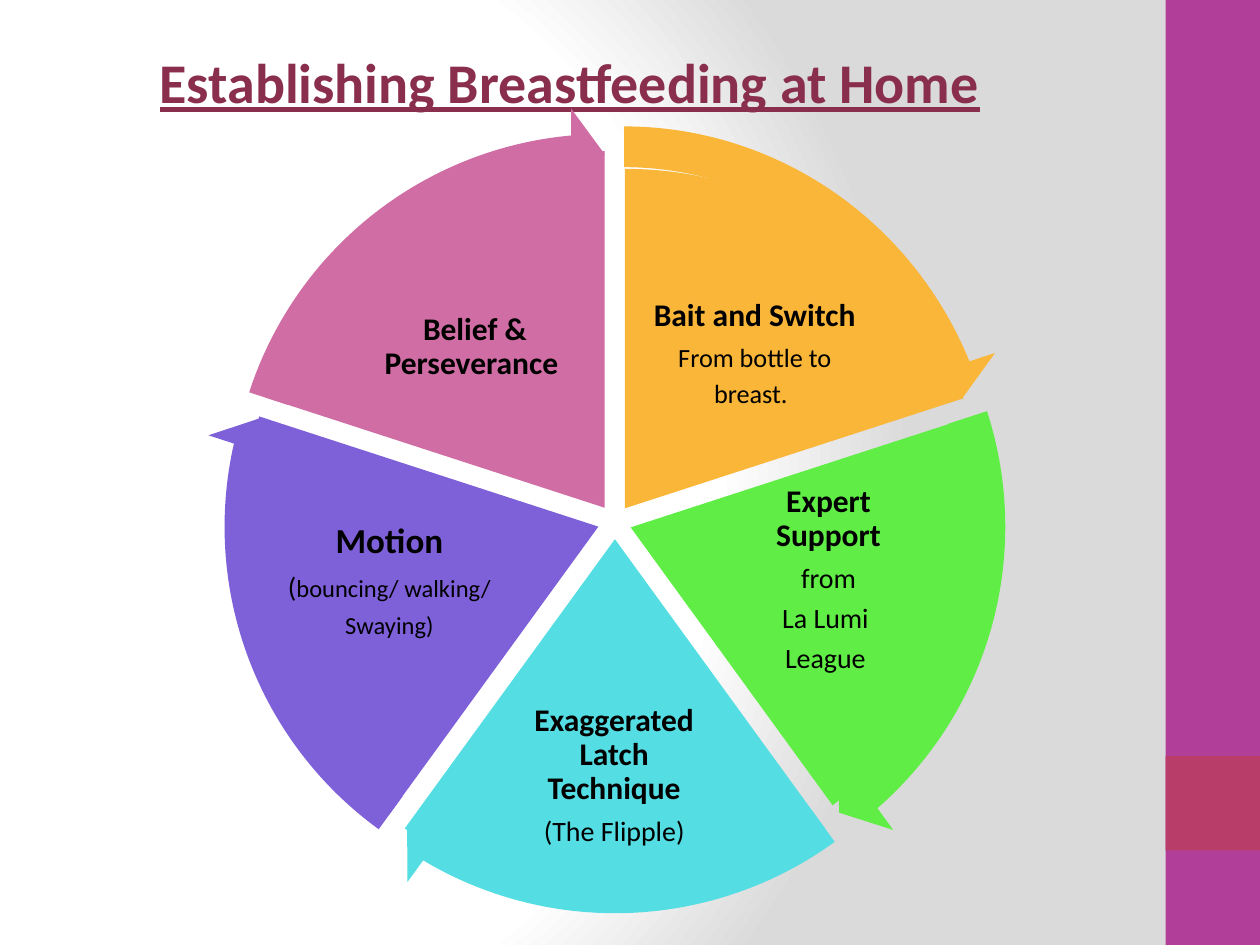
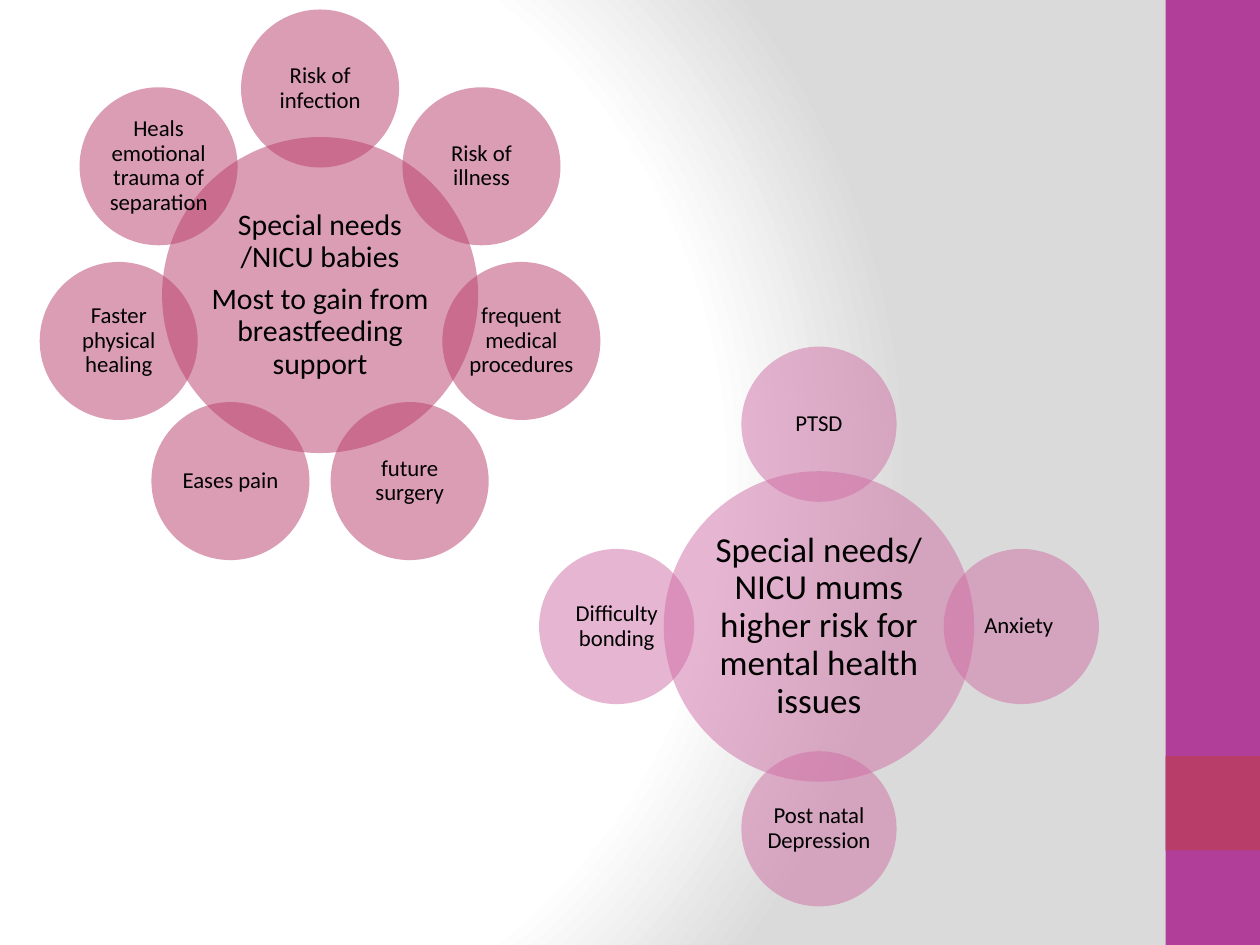
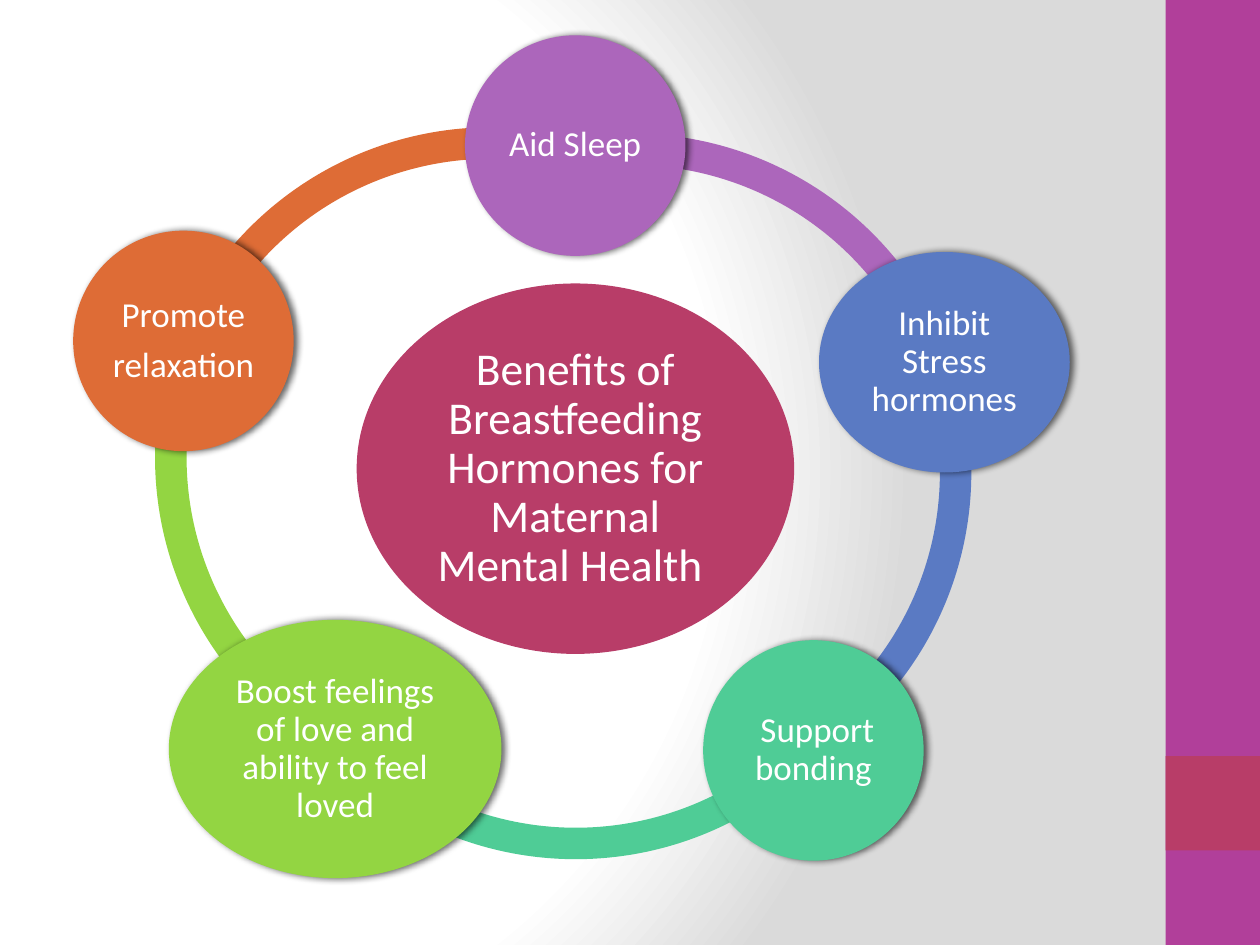
from math import cos, pi, sin

from pptx import Presentation
from pptx.dml.color import RGBColor
from pptx.enum.shapes import MSO_SHAPE
from pptx.enum.text import MSO_ANCHOR, PP_ALIGN
from pptx.oxml import parse_xml
from pptx.oxml.ns import nsdecls, qn
from pptx.util import Pt

RECT, OVAL, PIE = MSO_SHAPE.RECTANGLE, MSO_SHAPE.OVAL, MSO_SHAPE.PIE
ARROW, ARC = MSO_SHAPE.CIRCULAR_ARROW, MSO_SHAPE.BLOCK_ARC
MIDDLE, CENTER = MSO_ANCHOR.MIDDLE, PP_ALIGN.CENTER

BLACK = RGBColor(0x00, 0x00, 0x00)
WHITE = RGBColor(0xFF, 0xFF, 0xFF)
MAGENTA = RGBColor(0xB1, 0x3F, 0x9A)
CRIMSON = RGBColor(0xB8, 0x3D, 0x68)
WINE = RGBColor(0x8A, 0x2E, 0x4E)
PINK = RGBColor(0xCF, 0x6D, 0xA4)
AMBER = RGBColor(0xF9, 0xB6, 0x39)
LIME = RGBColor(0x60, 0xEE, 0x46)
CYAN = RGBColor(0x54, 0xDD, 0xE3)
VIOLET = RGBColor(0x7E, 0x60, 0xD9)
ORANGE = RGBColor(0xDE, 0x6C, 0x36)
GREEN = RGBColor(0x93, 0xD5, 0x42)
JADE = RGBColor(0x4F, 0xCC, 0x96)
BLUE = RGBColor(0x5A, 0x7A, 0xC3)
PURPLE = RGBColor(0xAC, 0x66, 0xBB)
SILVER = RGBColor(0xDA, 0xDA, 0xDA)

FONT = "Calibri"
WIDTH, HEIGHT, BAND = 720, 540, 54
ADJ_PER_DEGREE = 0.6
BODY = {"alignment": CENTER, "line_spacing": 0.9, "space_after": Pt(0)}

WHEEL_SIZE, WHEEL_ARROW, WHEEL_STEP = 407.5, 458, 72
WHEEL = [
    (AMBER, (152.6, 96.5, 409, 388), (127.4, 56.9, 458.6, 468),
     (365.8, 161.3, 131, 83.5),
     [[("Bait and Switch", 18, True)],
      [("From bottle to breast.", 15, False), (" ", 20, False)]]),
    (LIME, (167.8, 103, 385.2, 396.7), (131.8, 72, 458, 458),
     (416.2, 284.4, 114.5, 94.3),
     [[("Expert Support", 18, True)], [(" from ", 16, False)],
      [("La Lumi ", 16, False)], [("League ", 16, False)]]),
    (CYAN, (146.2, 104.4, 410.4, WHEEL_SIZE), (122.4, 79.2, 458, 458),
     (292.3, 390.2, 117.4, 106.6),
     [[("Exaggerated Latch Technique", 18, True)],
      [("(The Flipple)", 16, False)]]),
    (VIOLET, (138.2, 97.2, WHEEL_SIZE, WHEEL_SIZE), (113, 72, 458, 458),
     (162, 283.7, 121, 97.2),
     [[("Motion", 20, True)],
      [("(", 16, False), ("bouncing/ walking/ ", 14, False)],
      [("Swaying)", 14, False)]]),
    (PINK, (141.8, 86.4, WHEEL_SIZE, WHEEL_SIZE), (116.6, 61.2, 458, 458),
     (205.9, 154.8, 131, 87.1),
     [[("Belief & Perseverance ", 18, True)]]),
]

BABY_HUB = [[("Special needs /NICU babies", 17, False)],
            [("Most to gain from breastfeeding support", 17, False)]]
BABY_GAINS = ["Risk of infection", "Risk of illness",
              "frequent medical procedures ", "future surgery", "Eases pain",
              "Faster physical healing", "Heals emotional trauma of separation"]
MUM_HUB = [[("Special needs/ NICU mums higher risk for mental health issues",
             20, False)]]
MUM_RISKS = ["PTSD", "Anxiety ", "Post natal Depression",
             "Difficulty bonding"]

RING_SIZE, RING_THICK = 390.2, 18
RING = [
    (ORANGE, (85.7, 72.7), (202.47, 284.52)),
    (GREEN, (88.6, 66.2), (118.8, 200.3)),
    (JADE, (133.9, 100.8), (44.41, 136.03)),
    (BLUE, (164.9, 74.9), (340.66, 56.56)),
    (PURPLE, (165.6, 76.3), (260.43, 340.3)),
]
BENEFITS_HUB = ("Benefits of Breastfeeding Hormones for Maternal "
                "Mental Health ")
BENEFITS = [
    (PURPLE, (265.7, 20.2, 126, 126), ["Aid Sleep"]),
    (BLUE, (468, 144, 143.3, 126), ["Inhibit Stress hormones"]),
    (JADE, (401.8, 365.8, 126, 126), [" Support bonding"]),
    (GREEN, (96.5, 354.2, 190.1, 147.6),
     ["Boost feelings of love and ability to feel loved"]),
    (ORANGE, (41.8, 131.8, 126, 126), ["Promote", "relaxation "]),
]


def pts(box):
    """Turn a box of numbers into lengths."""
    return [Pt(v) for v in box]


def write(tf, paras, color, inset=2):
    """Fill a frame with centred paragraphs of (text, size, bold) runs."""
    frame = {"word_wrap": True, "vertical_anchor": MIDDLE}
    frame.update((f"margin_{side}", Pt(inset))
                 for side in ("left", "top", "right", "bottom"))
    for name, value in frame.items():
        setattr(tf, name, value)
    for i, runs in enumerate(paras):
        p = tf.paragraphs[0] if i == 0 else tf.add_paragraph()
        for name, value in BODY.items():
            setattr(p, name, value)
        after = p._p.pPr.find(qn("a:spcAft"))
        after.replace(after[0], parse_xml(
            f'<a:spcPct {nsdecls("a")} val="35000"/>'))
        for text, size, bold in runs:
            add_run(p, text, color, size=Pt(size), bold=bold)


def add_run(p, text, color, **fmt):
    """Add one run with its font values."""
    r = p.add_run()
    r.text = text
    r.font.color.rgb = color
    for name, value in {"name": FONT, **fmt}.items():
        setattr(r.font, name, value)


def add_flat(s, kind, box, color, adj=()):
    """Add a preset shape with a plain fill and no line."""
    sp = s.shapes.add_shape(kind, *pts(box))
    sp.shadow.inherit = False
    sp.fill.solid()
    sp.fill.fore_color.rgb = color
    sp.line.fill.background()
    for i, value in enumerate(adj):
        sp.adjustments[i] = value
    return sp


def set_alpha(sp, percent):
    """Make the fill of a shape see-through."""
    clr = sp._element.spPr.find(qn("a:solidFill"))[0]
    clr.append(parse_xml(
        f'<a:alpha {nsdecls("a")} val="{percent * 1000}"/>'))


def set_shadow(sp):
    """Give a shape a soft shadow on its right."""
    effects = sp._element.spPr.find(qn("a:effectLst"))
    effects.append(parse_xml(
        f'<a:outerShdw {nsdecls("a")} blurRad="{Pt(4)}" dist="{Pt(2)}" '
        'dir="0" rotWithShape="0"><a:srgbClr val="000000">'
        '<a:alpha val="60000"/></a:srgbClr></a:outerShdw>'))


def set_background(prs):
    """Give the master a round white to grey gradient."""
    master = prs.slide_master
    master.background.fill.solid()
    bg = master.element.find(".//" + qn("p:bgPr"))
    stops = "".join(
        f'<a:gs pos="{pos}"><a:srgbClr val="{color}"/></a:gs>'
        for pos, color in ((0, WHITE), (75000, WHITE), (100000, SILVER)))
    bg.replace(bg[0], parse_xml(
        f'<a:gradFill {nsdecls("a")} rotWithShape="1">'
        f'<a:gsLst>{stops}</a:gsLst><a:path path="circle"><a:fillToRect '
        'l="20000" t="50000" r="100000" b="50000"/></a:path></a:gradFill>'))


def add_slide(prs):
    """Add a blank slide with the side band."""
    s = prs.slides.add_slide(prs.slide_layouts[6])
    left = WIDTH - BAND
    add_flat(s, RECT, (left, 0, BAND, HEIGHT), MAGENTA)
    add_flat(s, RECT, (left, HEIGHT - 2 * BAND, BAND, BAND), CRIMSON)
    return s


def add_title(s, box, text):
    """Add the underlined slide title."""
    tf = s.shapes.add_textbox(*pts(box)).text_frame
    tf.word_wrap = False
    add_run(tf.paragraphs[0], text, WINE,
            size=Pt(32), bold=True, underline=True)


def add_wheel(s, sectors):
    """Add equal sectors clockwise from the top, then their arrows."""
    spans = []
    for i in range(len(sectors)):
        start = (270 + WHEEL_STEP * i) % 360
        end = (start + WHEEL_STEP) % 360
        spans.append((start * ADJ_PER_DEGREE, end * ADJ_PER_DEGREE))
    for (color, pie, _, label, paras), span in zip(sectors, spans):
        add_flat(s, PIE, pie, color, span)
        write(s.shapes.add_textbox(*pts(label)).text_frame, paras, BLACK)
    head = 3.27
    for (color, _, arrow, _, _), (start, end) in zip(sectors, spans):
        add_flat(s, ARROW, arrow, color,
                 (23.3 / WHEEL_ARROW, head, end - head, start,
                  27 / WHEEL_ARROW))


def add_cluster(s, box, orbit, color, hub, labels):
    """Add a hub in a square box with half-size circles around it."""
    left, top, size = box
    cx, cy = left + size / 2, top + size / 2
    parts = [(cx, cy, size, hub)]
    for i, label in enumerate(labels):
        angle = 2 * pi * i / len(labels)
        parts.append((cx + orbit * sin(angle), cy - orbit * cos(angle),
                      size / 2, [[(label, 13, False)]]))
    for x, y, d, paras in parts:
        sp = add_flat(s, OVAL, (x - d / 2, y - d / 2, d, d), color)
        set_alpha(sp, 50)
        write(sp.text_frame, paras, BLACK, 1.5)


def add_ring(s, arcs, hub_box, hub, nodes):
    """Add the ring of arcs, the hub and the shaded nodes."""
    for color, corner, span in arcs:
        start, end = (a * ADJ_PER_DEGREE for a in span)
        add_flat(s, ARC, (*corner, RING_SIZE, RING_SIZE), color,
                 (start, end, RING_THICK / RING_SIZE))
    sp = add_flat(s, OVAL, hub_box, CRIMSON)
    write(sp.text_frame, [[(hub, 26, False)]], WHITE, 2.6)
    for color, box, lines in nodes:
        sp = add_flat(s, OVAL, box, color)
        set_shadow(sp)
        write(sp.text_frame, [[(line, 20, False)] for line in lines], WHITE)


def main():
    """Build the three slides."""
    prs = Presentation()
    prs.slide_width, prs.slide_height = Pt(WIDTH), Pt(HEIGHT)
    set_background(prs)

    s = add_slide(prs)
    add_title(s, (84.2, 23.8, 522.7, 46), "Establishing Breastfeeding at Home")
    add_wheel(s, WHEEL)

    s = add_slide(prs)
    add_cluster(s, (92.6, 78.3, 180.6), 118, CRIMSON, BABY_HUB, BABY_GAINS)
    add_cluster(s, (379.3, 269.3, 177.4), 115.6, PINK, MUM_HUB, MUM_RISKS)

    s = add_slide(prs)
    add_ring(s, RING, (203.8, 162, 250, 211.7), BENEFITS_HUB, BENEFITS)

    prs.save("out.pptx")


if __name__ == "__main__":
    main()
